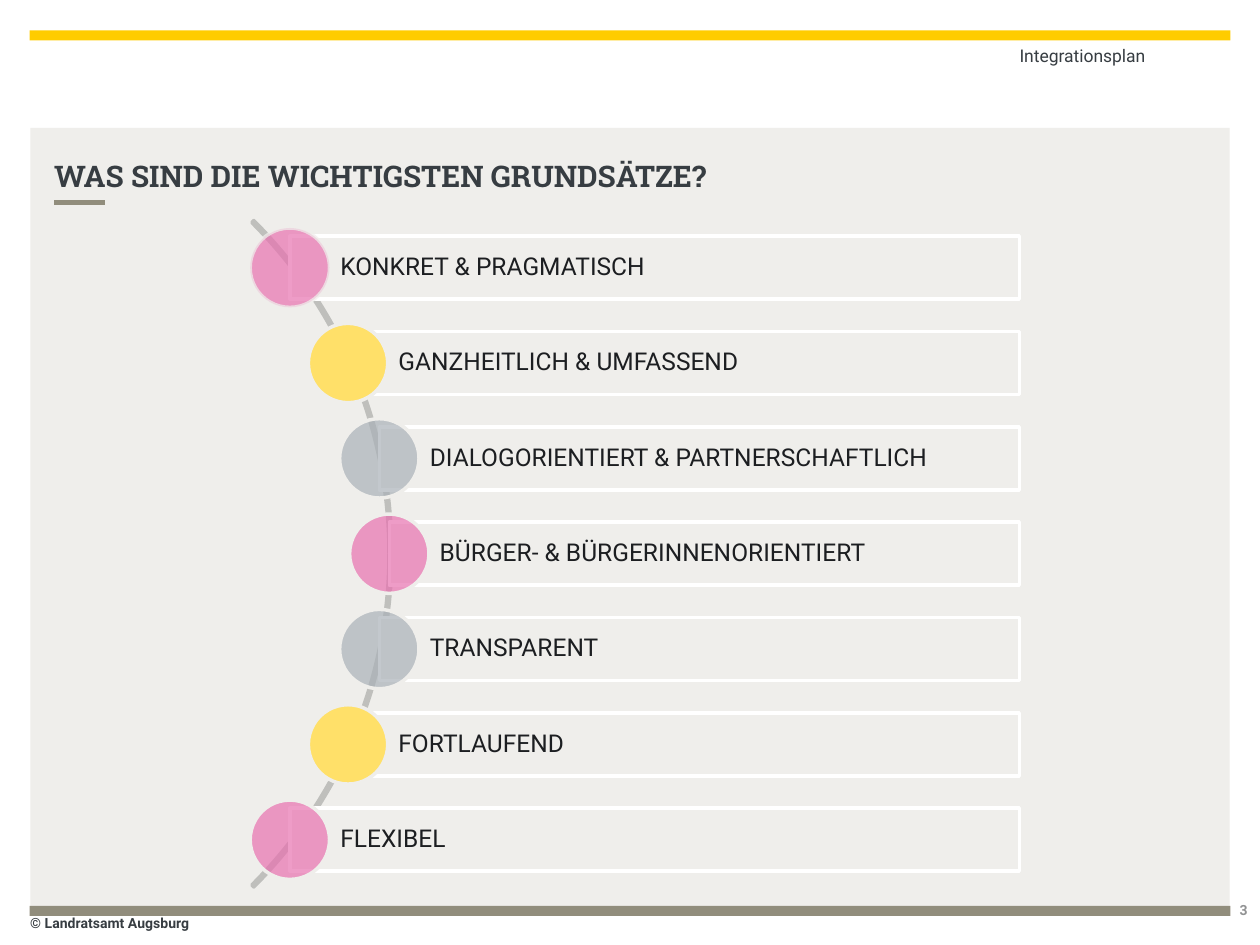
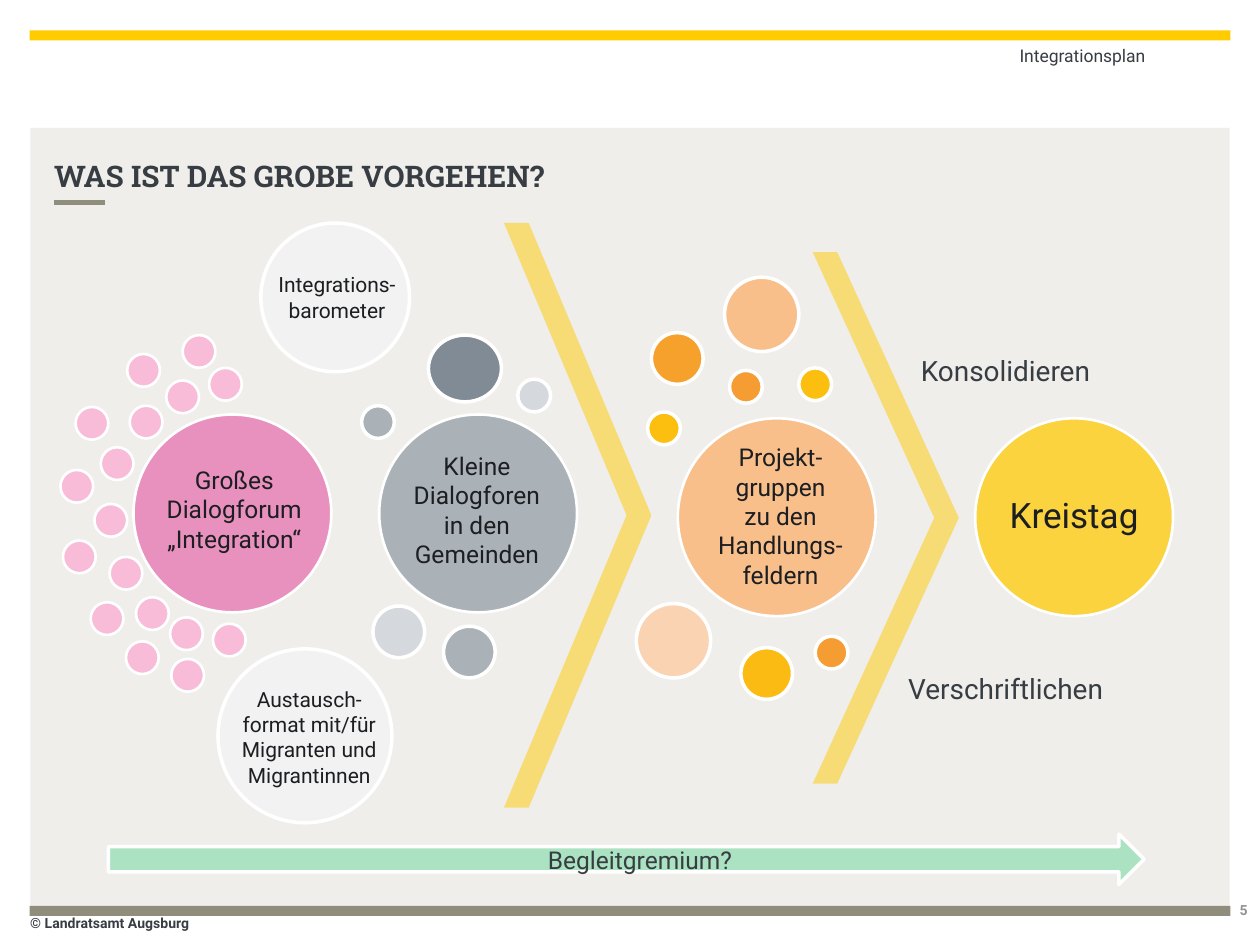
from collections import namedtuple
from math import sqrt

from lxml.etree import SubElement
from pptx import Presentation
from pptx.dml.color import RGBColor
from pptx.enum.shapes import MSO_CONNECTOR as Connector, MSO_SHAPE as Shape
from pptx.enum.text import MSO_ANCHOR as Anchor, PP_ALIGN as Align
from pptx.oxml.ns import qn
from pptx.util import Inches, Pt

# All lengths are cells of a grid with 100 columns and 75 rows.
CELL = Inches(0.1)
COLUMNS, ROWS = 100, 75
Box = namedtuple("Box", "left top width height")

YELLOW, TAUPE, PANEL, WHITE = "FFCC00", "918D7C", "EFEEEB", "FFFFFF"
SLATE, INK, PAGE_GREY, ARC_GREY = "373D42", "1C1E21", "919293", "BFBFBC"
PINK, GOLD, SUN, GREY, DARK_GREY = "E872B0", "FFCB05", "FFE069", "AAB2B8", "808B95"
PALE_GREY, OFF_WHITE, MINT = "D5D8DC", "F2F2F2", "ABE3C2"
PALE_PINK, APRICOT, PALE_APRICOT = "FF99CC/58", "F8BF8B", "FAD4B2"
ORANGE, DEEP_ORANGE, AMBER, DEEP_AMBER = "F6A12C", "F59C32", "FDBF0F", "FCBB12"

BODY, SLAB = "Roboto", "Roboto Slab"
TITLE = dict(size=Pt(17), name=SLAB, color=SLATE, bold=True)
HEADER = dict(size=Pt(10), name=BODY, color=SLATE)
FOOTER = dict(size=Pt(8), name=BODY, color=SLATE, bold=True)
PAGE_NUMBER = {**FOOTER, "color": PAGE_GREY}
LABEL = dict(size=Pt(14), name=BODY, color=INK)
SMALL_LABEL = {**LABEL, "size": Pt(12)}
LARGE_LABEL = {**LABEL, "size": Pt(20)}
STEP = dict(size=Pt(16), name=BODY, color=SLATE)
ACCOMPANIMENT = {**STEP, "size": Pt(14)}

NO_MARGINS = (0, 0, 0, 0)
TEXT_MARGINS = (1, 0.5, 1, 0.5)
CENTRED = dict(alignment=Align.CENTER)
RIGHT = dict(alignment=Align.RIGHT)

PRINCIPLES = [
    ("KONKRET & PRAGMATISCH", PINK + "/70"),
    ("GANZHEITLICH & UMFASSEND", SUN),
    ("DIALOGORIENTIERT & PARTNERSCHAFTLICH", GREY + "/70"),
    ("BÜRGER- & BÜRGERINNENORIENTIERT", PINK + "/70"),
    ("TRANSPARENT", GREY + "/70"),
    ("FORTLAUFEND", SUN),
    ("FLEXIBEL", PINK + "/70"),
]

# Satellites: left and top from the stage circle, width, height, colour
SMALL, MEDIUM, LARGE = (2.6, 2.6), (4.1, 4.1), (5.9, 5.9)
FORUM_DOTS = [
    (6, -3.7), (-2.6, 2.6), (-0.3, -0.7), (-4.6, -0.6), (2.6, -2.7), (-5.8, 4.4),
    (-3.1, 7.1), (-1.9, 11.3), (0.2, 14.5), (-5.6, 10), (-3.4, 14.9), (2.9, 16.1),
    (6.3, 16.6), (-0.5, -4.8), (3.9, -6.3), (-0.6, 18), (3, 19.4),
]
FORUM_SATELLITES = [(x, y, *SMALL, PALE_PINK) for x, y in FORUM_DOTS]
MUNICIPAL_SATELLITES = [
    (5.1, 16.8, *MEDIUM, GREY),
    (-1.4, -0.7, *SMALL, GREY),
    (11, -2.8, *SMALL, PALE_GREY),
    (-0.5, 15.2, *MEDIUM, PALE_GREY),
    (3.9, -6.3, 5.8, 5.3, DARK_GREY),
]
PROJECT_SATELLITES = [
    (-3.3, 14.7, *LARGE, PALE_APRICOT),
    (4.1, -3.8, *SMALL, DEEP_ORANGE),
    (-2.1, -6.8, *MEDIUM, ORANGE),
    (-2.4, -0.5, *SMALL, AMBER),
    (5, 18.2, *MEDIUM, DEEP_AMBER),
    (3.7, -11.2, *LARGE, APRICOT),
    (9.6, -4, *SMALL, AMBER),
    (10.9, 17.3, *SMALL, DEEP_ORANGE),
]


def grid(*cells):
    return [round(cell * CELL) for cell in cells]


def within(box, left, top, width, height):
    """Box placed relative to the top left corner of another box."""
    return Box(box.left + left, box.top + top, width, height)


def paint(fill, colour):
    """Solid fill from "RRGGBB" or "RRGGBB/opacity in percent"."""
    value, _, opacity = colour.partition("/")
    fill.solid()
    fill.fore_color.rgb = RGBColor.from_string(value)
    if opacity:
        colour_element = fill._xPr.find(qn("a:solidFill"))[0]
        SubElement(colour_element, qn("a:alpha"), val=str(int(opacity) * 1000))


def apply(target, formats):
    for name, value in formats.items():
        if name == "color":
            target.color.rgb = RGBColor.from_string(value)
        else:
            setattr(target, name, value)


def write(shape, lines, font, paragraph_format=None, margins=NO_MARGINS, anchor=Anchor.TOP):
    frame = shape.text_frame
    names = ("margin_left", "margin_top", "margin_right", "margin_bottom")
    apply(frame, dict(zip(names, grid(*margins))))
    apply(frame, dict(word_wrap=True, vertical_anchor=anchor))
    for number, line in enumerate(lines):
        paragraph = frame.add_paragraph() if number else frame.paragraphs[0]
        paragraph.text = line
        apply(paragraph, paragraph_format or {})
        apply(paragraph.font, font)


def add_text(slide, box, *arguments, **options):
    write(slide.shapes.add_textbox(*grid(*box)), *arguments, **options)


def add_figure(slide, kind, box, fill=None, line=None, width=2, adjustments=()):
    shape = slide.shapes.add_shape(kind, *grid(*box))
    shape.shadow.inherit = False
    for number, value in enumerate(adjustments):
        shape.adjustments[number] = value
    for part, colour in ((shape.fill, fill), (shape.line.fill, line)):
        if colour:
            paint(part, colour)
        else:
            part.background()
    if line:
        shape.line.width = Pt(width)
    return shape


def add_frame(presentation, title, page):
    """Slide with the shared bands, panel, title, header and footer."""
    slide = presentation.slides.add_slide(presentation.slide_layouts[6])
    for box, colour in (
        (Box(2.35, 2.4, 95.3, 0.8), YELLOW),
        (Box(2.4, 10.15, 95.2, 62), PANEL),
        (Box(2.35, 71.9, 95.3, 0.8), TAUPE),
    ):
        add_figure(slide, Shape.RECTANGLE, box, colour)
    rule = slide.shapes.add_connector(Connector.STRAIGHT, *grid(4.3, 16.05, 8.3, 16.05))
    SubElement(rule._element.spPr, qn("a:effectLst"))
    paint(rule.line.fill, TAUPE)
    rule.line.width = Pt(3)
    # The line properties belong before the effect list.
    rule._element.spPr.append(rule._element.spPr.find(qn("a:effectLst")))

    add_text(slide, Box(4.3, 12.5, 64.9, 2.9), [title], TITLE, dict(line_spacing=Pt(20.4)))
    add_text(slide, Box(4.3, 3.6, 86.6, 1.6), ["Integrationsplan"], HEADER, RIGHT)
    add_text(slide, Box(2.4, 72.6, 20, 2.4), ["© Landratsamt Augsburg"], FOOTER)
    add_text(slide, Box(96.6, 71.6, 3.4, 1.2), [str(page)], PAGE_NUMBER, RIGHT,
             TEXT_MARGINS, Anchor.MIDDLE)
    return slide


def add_principles(slide, box):
    """Rows whose discs follow an arc that bulges to the right."""
    disc, bar_height, arc_size, curve = 6.3, 5, 74.8, 36.6
    peak = box.left + 11.1
    middle = box.top + box.height / 2
    pitch = (box.height - disc) / (len(PRINCIPLES) - 1)
    arc = Box(peak + 0.2 - arc_size, middle - arc_size / 2, arc_size, arc_size)
    add_figure(slide, Shape.BLOCK_ARC, arc, None, ARC_GREY, adjustments=(189, 27, 0.003))
    for row, (text, colour) in enumerate(PRINCIPLES):
        y = box.top + disc / 2 + row * pitch
        x = peak - curve + sqrt(curve ** 2 - (y - middle) ** 2)
        bar = Box(x, y - bar_height / 2, box.left + box.width - x, bar_height)
        shape = add_figure(slide, Shape.RECTANGLE, bar, PANEL, WHITE)
        write(shape, [text], LABEL, dict(alignment=Align.LEFT, line_spacing=0.9),
              (4, 0.4, 0.4, 0.4), Anchor.MIDDLE)
        edge = PANEL if row else PANEL + "/75"
        add_figure(slide, Shape.OVAL, Box(x - disc / 2, y - disc / 2, disc, disc), colour, edge)


def add_stage(slide, box, colour, lines, text_area, satellites, satellite_line=2):
    """Large circle with its label and the small circles around it."""
    for *place, satellite_colour in satellites:
        add_figure(slide, Shape.OVAL, within(box, *place), satellite_colour, WHITE, satellite_line)
    add_figure(slide, Shape.OVAL, box, colour, WHITE, 1.5)
    add_text(slide, within(box, *text_area), lines, LABEL, CENTRED, TEXT_MARGINS)


def add_side_format(slide, box, lines, text_area):
    add_figure(slide, Shape.OVAL, box, OFF_WHITE, WHITE)
    add_text(slide, within(box, *text_area), lines, SMALL_LABEL, CENTRED, TEXT_MARGINS)


def add_council(slide, box):
    """Final circle with the two steps above and below it."""
    circle = add_figure(slide, Shape.OVAL, box, GOLD + "/75", WHITE, 1.5)
    write(circle, ["Kreistag"], LARGE_LABEL, {**CENTRED, "line_spacing": 0.9},
          anchor=Anchor.MIDDLE)
    for place, text in (
        ((-5.3, -5.6, 16.9, 3.7), "Konsolidieren"),
        ((-6.3, 19.6, 20.5, 3.7), "Verschriftlichen"),
    ):
        add_text(slide, within(box, *place), [text], STEP, margins=TEXT_MARGINS)


def add_accompaniment(slide, box):
    add_figure(slide, Shape.RIGHT_ARROW, box, MINT, WHITE)
    add_text(slide, within(box, 33.9, 0.4, 44, 3.4), ["Begleitgremium?"], ACCOMPANIMENT,
             margins=TEXT_MARGINS)


def add_process(slide):
    size = 15.7
    for box in (Box(40, 17.7, 11.7, 46.4), Box(64.5, 20, 11.6, 42.2)):
        add_figure(slide, Shape.CHEVRON, box, GOLD + "/51", adjustments=(0.832,))
    add_stage(slide, Box(10.6, 32.9, size, size), PINK + "/75",
              ["Großes Dialogforum", "„Integration“"],
              (-0.3, 3.5, 16.6, 8.1), FORUM_SATELLITES, 1.5)
    add_stage(slide, Box(30.1, 32.9, size, size), GREY,
              ["Kleine", "Dialogforen in den Gemeinden"],
              (0.8, 2.4, 13.9, 10.6), MUNICIPAL_SATELLITES)
    add_stage(slide, Box(53.8, 33.2, size, size), APRICOT,
              ["Projekt-gruppen", "zu den Handlungs- feldern"],
              (0.8, 1.4, 14.7, 12.8), PROJECT_SATELLITES)
    add_side_format(slide, Box(17.3, 51.5, 13.8, 13.8),
                    ["Austausch-format mit/für Migranten und Migrantinnen"],
                    (-0.1, 2.5, 14.7, 9.1))
    add_side_format(slide, Box(20.7, 17.7, 11.8, 11.8), ["Integrations-", "barometer"],
                    (-1.3, 3.4, 14.7, 5))
    add_council(slide, Box(77.4, 33.2, size, size))
    add_accompaniment(slide, Box(8.6, 66.2, 82.2, 4))


def main():
    presentation = Presentation()
    presentation.slide_width, presentation.slide_height = grid(COLUMNS, ROWS)
    principles = add_frame(presentation, "WAS SIND DIE WICHTIGSTEN GRUNDSÄTZE?", 3)
    add_principles(principles, Box(19.8, 18.1, 61.1, 51.7))
    process = add_frame(presentation, "WAS IST DAS GROBE VORGEHEN?", 5)
    add_process(process)
    presentation.save("out.pptx")


if __name__ == "__main__":
    main()
